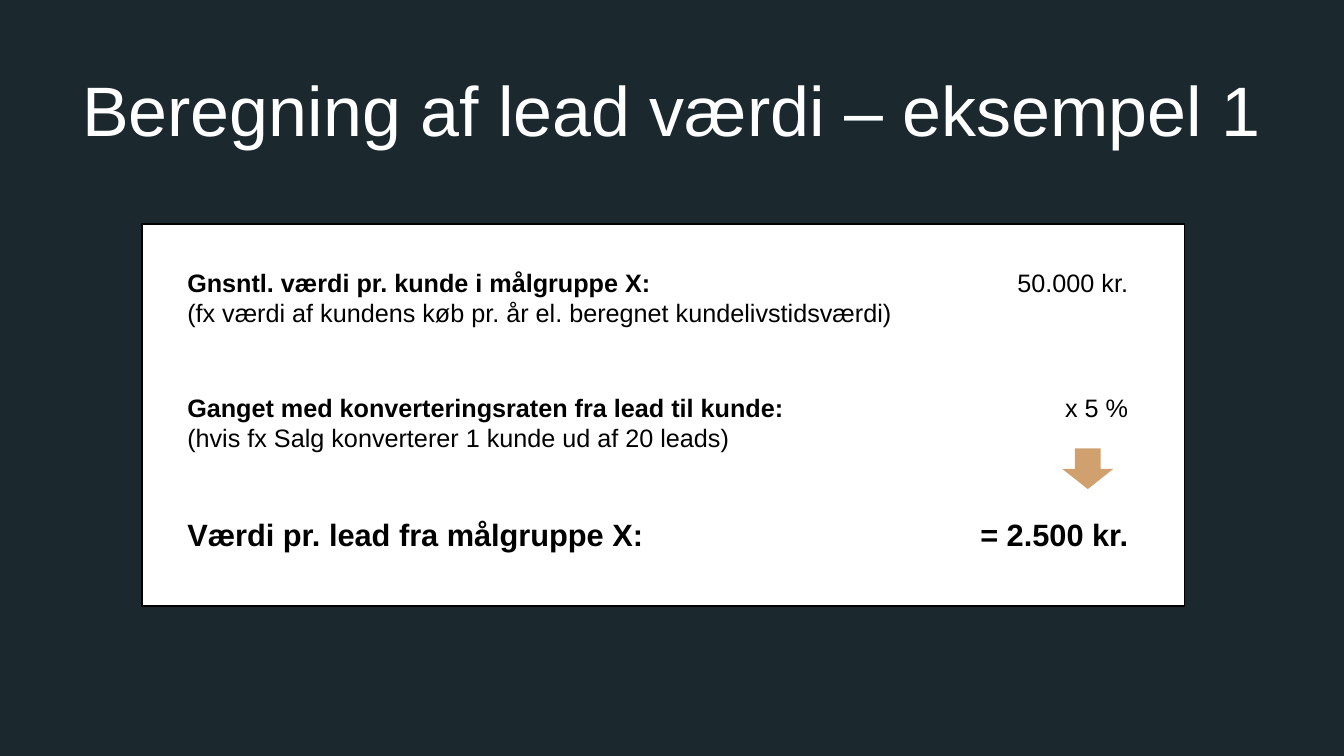
from pptx import Presentation
from pptx.dml.color import RGBColor
from pptx.enum.shapes import MSO_SHAPE as Shape
from pptx.enum.text import MSO_ANCHOR as Anchor, MSO_AUTO_SIZE as AutoSize, PP_ALIGN as Align
from pptx.util import Pt

COLORS = {"background": "1B282E", "white": "FFFFFF", "black": "000000", "arrow": "D0A06F"}
LABEL_LEFT = 126.7
VALUE_RIGHT = 812.9
ROWS = [
    (187.2, 18, 668, "Gnsntl. værdi pr. kunde i målgruppe X:",
     "(fx værdi af kundens køb pr. år el. beregnet kundelivstidsværdi)", "50.000 kr.", 107.3),
    (276.5, 18, 585, "Ganget med konverteringsraten fra lead til kunde:",
     "(hvis fx Salg konverterer 1 kunde ud af 20 leads)", "x 5 %", 107.3),
    (365, 22, 478, "Værdi pr. lead fra målgruppe X:", "", "= 2.500 kr.", 151.2),
]


class SlideBuilder:
    """Holds the text style and the current slide."""

    def __init__(self, slide, font_name="Arial"):
        self.slide = slide
        self.font_name = font_name

    def color(self, name):
        return RGBColor.from_string(COLORS[name])

    def background(self, color):
        fill = self.slide.background.fill
        fill.solid()
        fill.fore_color.rgb = self.color(color)

    def format_run(self, run, size, color, bold=False):
        run.font.name = self.font_name
        run.font.size = Pt(size)
        run.font.bold = bold
        run.font.color.rgb = self.color(color)

    def title(self, text, left, top, width, height):
        title = self.slide.shapes.title
        title.left, title.top, title.width, title.height = map(Pt, (left, top, width, height))
        text_frame = title.text_frame
        text_frame.text = text
        text_frame.vertical_anchor = Anchor.MIDDLE
        paragraph = text_frame.paragraphs[0]
        paragraph.alignment = Align.CENTER
        paragraph.line_spacing = 0.9
        self.format_run(paragraph.runs[0], 50, "white")

    def shape(self, kind, left, top, width, height, fill, line=None, rotation=0):
        shape = self.slide.shapes.add_shape(kind, *map(Pt, (left, top, width, height)))
        shape.shadow.inherit = False
        shape.rotation = rotation
        shape.fill.solid()
        shape.fill.fore_color.rgb = self.color(fill)
        if line:
            shape.line.color.rgb = self.color(line)
            shape.line.width = Pt(1)
        else:
            shape.line.fill.background()

    def text(self, lines, left, top, width, size, bolds, alignment=Align.LEFT):
        height = 7.2 + 1.2 * size * len(lines)
        box = self.slide.shapes.add_textbox(*map(Pt, (left, top, width, height)))
        text_frame = box.text_frame
        text_frame.word_wrap = True
        text_frame.auto_size = AutoSize.SHAPE_TO_FIT_TEXT
        paragraph = text_frame.paragraphs[0]
        paragraph.text = "\v".join(lines)
        paragraph.alignment = alignment
        for run, bold in zip(paragraph.runs, bolds):
            self.format_run(run, size, "black", bold)


def main():
    presentation = Presentation()
    presentation.slide_width, presentation.slide_height = Pt(960), Pt(540)
    builder = SlideBuilder(presentation.slides.add_slide(presentation.slide_layouts[5]))
    builder.background("background")
    builder.title("Beregning af lead værdi – eksempel 1", 0, 28.8, 960, 104.4)
    builder.shape(Shape.RECTANGLE, 101.5, 160, 744.5, 273, "white", line="black")
    for top, size, width, label, note, value, value_width in ROWS:
        lines = [label, note] if note else [label]
        builder.text(lines, LABEL_LEFT, top, width, size, [True, False])
        builder.text([value], VALUE_RIGHT - value_width, top, value_width, size,
                     [not note], Align.RIGHT)
    builder.shape(Shape.RIGHT_ARROW, 762.5, 316.5, 29, 36.7, "arrow", rotation=90)
    presentation.save("out.pptx")


if __name__ == "__main__":
    main()
